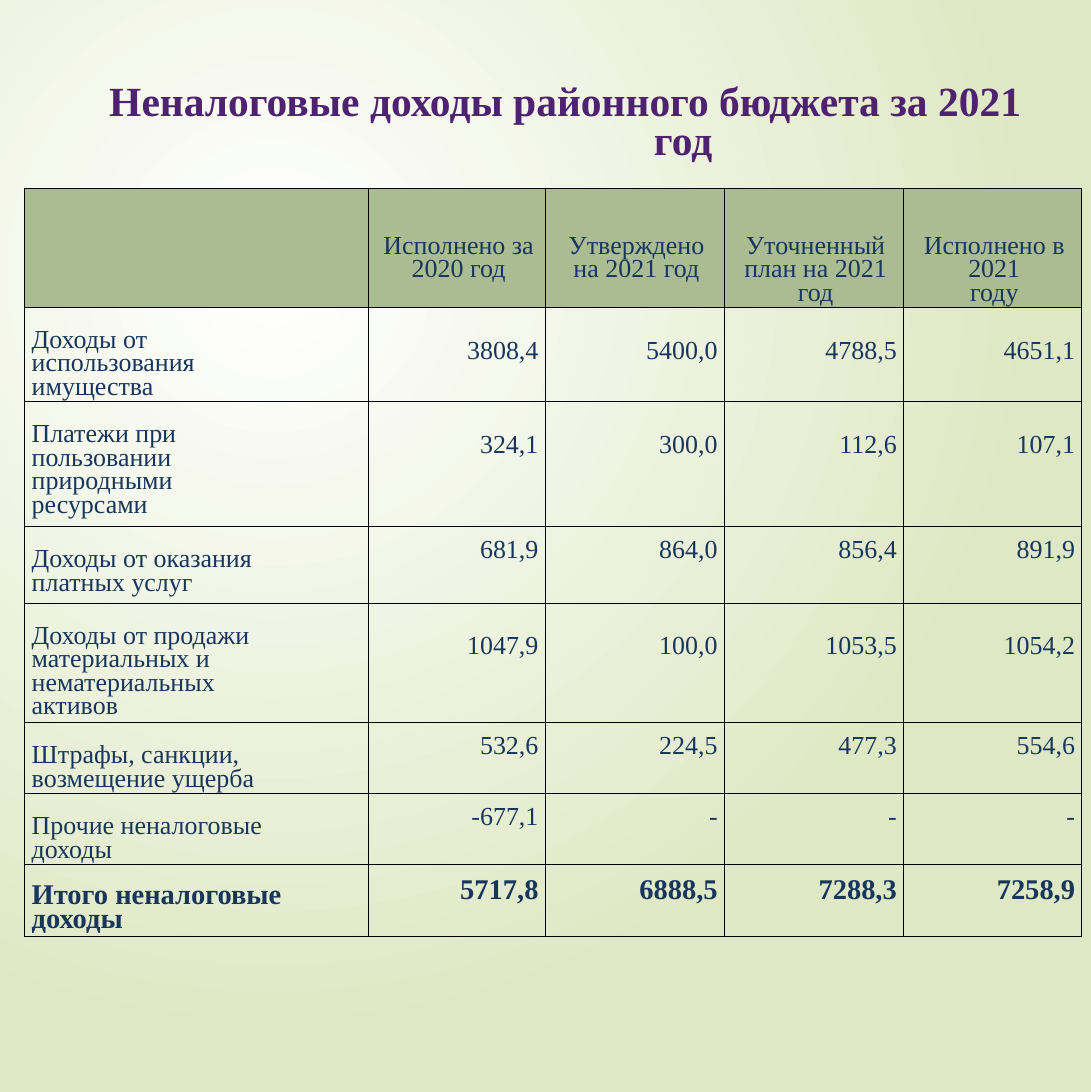
from pptx import Presentation
from pptx import util as u
from pptx.dml.color import RGBColor
from pptx.enum import text
from pptx.oxml import parse_xml
from pptx.oxml.ns import nsdecls

WIDTH, HEIGHT = 11.69, 11.7
FONT = "Times New Roman"
PURPLE, NAVY, SAGE = "4F2171", "17365D", "ACBC92"
CENTER, LEFT, RIGHT = text.PP_ALIGN.CENTER, text.PP_ALIGN.LEFT, text.PP_ALIGN.RIGHT

COLUMNS = [3.69, 1.89, 1.92, 1.92, 1.91]
HEADER_HEIGHT = 1.27
HEADERS = ["", "Исполнено за 2020 год", "Утверждено на 2021 год",
           "Уточненный план на 2021 год", "Исполнено в 2021\nгоду"]
# Row height, top margin of the figures, label, figures
INCOMES = [
    (1.01, 0.31, "Доходы от использования имущества",
     ["3808,4", "5400,0", "4788,5", "4651,1"]),
    (1.34, 0.31, "Платежи при пользовании\nприродными ресурсами",
     ["324,1", "300,0", "112,6", "107,1"]),
    (0.82, 0.1, "Доходы от оказания платных услуг",
     ["681,9", "864,0", "856,4", "891,9"]),
    (1.28, 0.31, "Доходы от продажи материальных и\nнематериальных активов",
     ["1047,9", "100,0", "1053,5", "1054,2"]),
    (0.76, 0.1, "Штрафы, санкции, возмещение ущерба",
     ["532,6", "224,5", "477,3", "554,6"]),
    (0.76, 0.1, "Прочие неналоговые доходы",
     ["-677,1", "-", "-", "-"]),
    (0.77, 0.11, "Итого неналоговые доходы",
     ["5717,8", "6888,5", "7288,3", "7258,9"]),
]


def rgb(value):
    return RGBColor.from_string(value)


def set_margins(target, left, top, right, bottom=0):
    """Set the inner margins of a cell or text frame, in inches."""
    target.margin_left, target.margin_top = u.Inches(left), u.Inches(top)
    target.margin_right, target.margin_bottom = u.Inches(right), u.Inches(bottom)


def write(tf, content, size, color, align, bold=False, line=None):
    """Write each line of content as a paragraph with one run."""
    for i, words in enumerate(content.split("\n")):
        p = tf.paragraphs[0] if i == 0 else tf.add_paragraph()
        p.alignment = align
        if line:
            p.line_spacing = u.Pt(line)
        r = p.add_run()
        r.text = words
        r.font.name, r.font.size, r.font.bold = FONT, u.Pt(size), bold
        r.font.color.rgb = rgb(color)


def add_background(s):
    """Fill the slide with a radial gradient centred in its upper left."""
    s._element.cSld.insert(0, parse_xml(
        f'<p:bg {nsdecls("p", "a")}><p:bgPr><a:gradFill rotWithShape="1"><a:gsLst>'
        '<a:gs pos="0"><a:srgbClr val="FFFFFF"/></a:gs>'
        '<a:gs pos="100000"><a:srgbClr val="DFE8C4"/></a:gs></a:gsLst>'
        '<a:path path="circle">'
        '<a:fillToRect l="50000" t="50000" r="100000" b="100000"/></a:path>'
        '</a:gradFill><a:effectLst/></p:bgPr></p:bg>'))


def add_title(s, x, y, w, h):
    sp = s.shapes.title
    sp.left, sp.top, sp.width, sp.height = map(u.Inches, (x, y, w, h))
    tf = sp.text_frame
    tf.word_wrap, tf.auto_size = True, text.MSO_AUTO_SIZE.NONE
    tf.vertical_anchor = text.MSO_ANCHOR.TOP
    set_margins(tf, 0, 0.04, 0.2)
    write(tf, "Неналоговые доходы районного бюджета за 2021 год",
          32, PURPLE, CENTER, bold=True, line=30)
    p = tf.paragraphs[0]
    p.space_before = u.Pt(2.9)
    pPr = p._p.get_or_add_pPr()
    pPr.set("marL", str(u.Inches(2.53)))
    pPr.set("indent", str(u.Inches(-2.52)))


def add_borders(cell):
    tcPr = cell._tc.get_or_add_tcPr()
    for side in "LRTB":
        tcPr.append(parse_xml(
            f'<a:ln{side} {nsdecls("a")} w="{u.Pt(0.5)}"><a:solidFill>'
            f'<a:srgbClr val="000000"/></a:solidFill></a:ln{side}>'))


def add_income_table(s, x, y):
    heights = [HEADER_HEIGHT] + [income[0] for income in INCOMES]
    frame = s.shapes.add_table(len(heights), len(COLUMNS), u.Inches(x), u.Inches(y),
                               u.Inches(sum(COLUMNS)), u.Inches(sum(heights)))
    table = frame.table
    table.first_row = table.horz_banding = False
    for column, width in zip(table.columns, COLUMNS):
        column.width = u.Inches(width)
    for row, height in zip(table.rows, heights):
        row.height = u.Inches(height)
    for cell in table.iter_cells():
        add_borders(cell)
        cell.fill.background()

    for c, header in enumerate(HEADERS):
        cell = table.cell(0, c)
        cell.fill.solid()
        cell.fill.fore_color.rgb = rgb(SAGE)
        set_margins(cell, 0.12, 0.51, 0.08)
        if header:
            write(cell.text_frame, header, 20, NAVY, CENTER, line=18.2)

    for i, (_, top, label, figures) in enumerate(INCOMES, 1):
        total = i == len(INCOMES)
        size = 22 if total else 20
        cell = table.cell(i, 0)
        set_margins(cell, 0.08, 0.25, 0.88)
        write(cell.text_frame, label, size, NAVY, LEFT, total, line=18.2)
        for c, figure in enumerate(figures, 1):
            cell = table.cell(i, c)
            set_margins(cell, 0, top, 0.07)
            write(cell.text_frame, figure, size, NAVY, RIGHT, total)


def main():
    prs = Presentation()
    prs.slide_width, prs.slide_height = u.Inches(WIDTH), u.Inches(HEIGHT)
    s = prs.slides.add_slide(prs.slide_layouts[5])
    add_background(s)
    add_title(s, 0.85, 0.88, 10.61, 0.96)
    add_income_table(s, 0.26, 2.02)
    prs.save("out.pptx")


if __name__ == "__main__":
    main()
